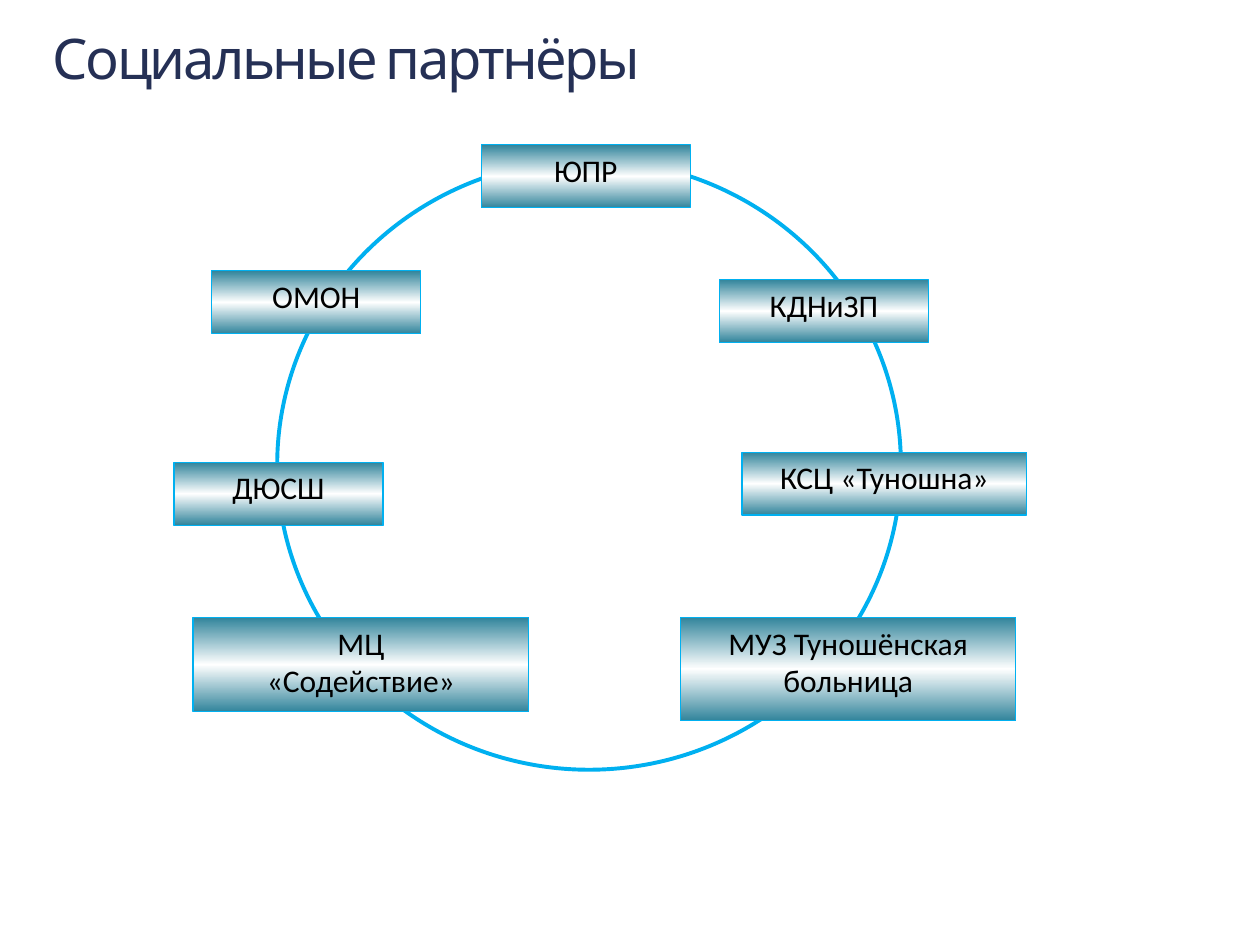
from copy import deepcopy

from pptx import Presentation
from pptx.dml.color import RGBColor
from pptx.enum.shapes import MSO_SHAPE
from pptx.enum.text import MSO_ANCHOR, MSO_AUTO_SIZE, PP_ALIGN
from pptx.oxml.ns import qn
from pptx.util import Pt

RECTANGLE, OVAL = MSO_SHAPE.RECTANGLE, MSO_SHAPE.OVAL
LEFT, CENTER = PP_ALIGN.LEFT, PP_ALIGN.CENTER
TOP = MSO_ANCHOR.TOP
GROW = MSO_AUTO_SIZE.SHAPE_TO_FIT_TEXT

SKY = "00B0F0"
TEAL_BAND = [(0, "31849B"), (0.5, "FFFFFF"), (1, "31849B")]
TITLE_BLEND = [(0, "2E59B0"), (0.49, "253055"), (1, "5100A2")]

LABEL_W, LABEL_H = 119.5, 36
# name, offset from the ring's left and top, width, height, space after
PARTNERS = [
    ("ЮПР", 116.6, -8.6, LABEL_W, LABEL_H, 10),
    ("КДНиЗП", 252.7, 68.4, LABEL_W, LABEL_H, 10),
    ("ОМОН", -37.4, 63.4, LABEL_W, LABEL_H, 10),
    ("ДЮСШ", -59, 172.8, LABEL_W, LABEL_H, 10),
    ("МЦ\n«Содействие»", -48.2, 261.4, 192, 54, 0),
    ("КСЦ «Туношна»", 265.7, 167, 162.7, LABEL_H, 10),
    ("МУЗ Туношёнская больница", 230.4, 261.4, 191.7, 59, 10),
]


def color(hex_value):
    return RGBColor.from_string(hex_value)


def blend(fill, element, stops):
    """Give a fill inside element a top-down gradient of (position, colour) stops."""
    fill.gradient()
    fill.gradient_angle = 270
    stop_list = next(element.iter(qn("a:gsLst")))
    while len(stop_list) < len(stops):
        stop_list.append(deepcopy(stop_list[0]))
    for stop, (position, hex_value) in zip(fill.gradient_stops, stops):
        stop.position = position
        stop.color.rgb = color(hex_value)


def write(shape, text, font, size, hex_value, align=LEFT, after=0, spacing=None):
    frame = shape.text_frame
    frame.word_wrap = True
    frame.vertical_anchor = TOP
    frame.text = text
    for paragraph in frame.paragraphs:
        paragraph.alignment = align
        paragraph.space_after = Pt(after)
        paragraph.line_spacing = spacing
        for run in paragraph.runs:
            run.font.name = font
            run.font.size = Pt(size)
            run.font.color.rgb = color(hex_value)
    return frame


def add_outlined(slide, preset, left, top, width, height, line_width):
    shape = slide.shapes.add_shape(preset, Pt(left), Pt(top), Pt(width), Pt(height))
    shape.shadow.inherit = False
    shape.line.color.rgb = color(SKY)
    shape.line.width = Pt(line_width)
    return shape


def add_title(slide, left, top, width, height):
    title = slide.shapes.add_textbox(Pt(left), Pt(top), Pt(width), Pt(height))
    frame = write(title, "Социальные партнёры", "Cabin", 32, "253055", spacing=0.9)
    frame.margin_left = frame.margin_right = 0
    frame.margin_top = frame.margin_bottom = 0
    frame.auto_size = GROW
    blend(frame.paragraphs[0].runs[0].font.fill, title.element, TITLE_BLEND)
    next(title.element.iter(qn("a:rPr"))).set("spc", "-150")


def add_partner_ring(slide, left, top, width, height):
    ring = add_outlined(slide, OVAL, left, top, width, height, 2.25)
    ring.fill.solid()
    ring.fill.fore_color.rgb = color("FFFFFF")
    for name, dx, dy, label_w, label_h, after in PARTNERS:
        label = add_outlined(slide, RECTANGLE, left + dx, top + dy,
                             label_w, label_h, 0.75)
        blend(label.fill, label.element, TEAL_BAND)
        write(label, name, "Calibri", 18, "000000", align=CENTER, after=after)


def main():
    deck = Presentation()
    deck.slide_width, deck.slide_height = Pt(720), Pt(540)
    slide = deck.slides.add_slide(deck.slide_layouts[6])
    add_title(slide, 30.2, 18, 660, 34.6)
    add_partner_ring(slide, 158.4, 91.4, 356.4, 348.5)
    deck.save("out.pptx")


if __name__ == "__main__":
    main()
